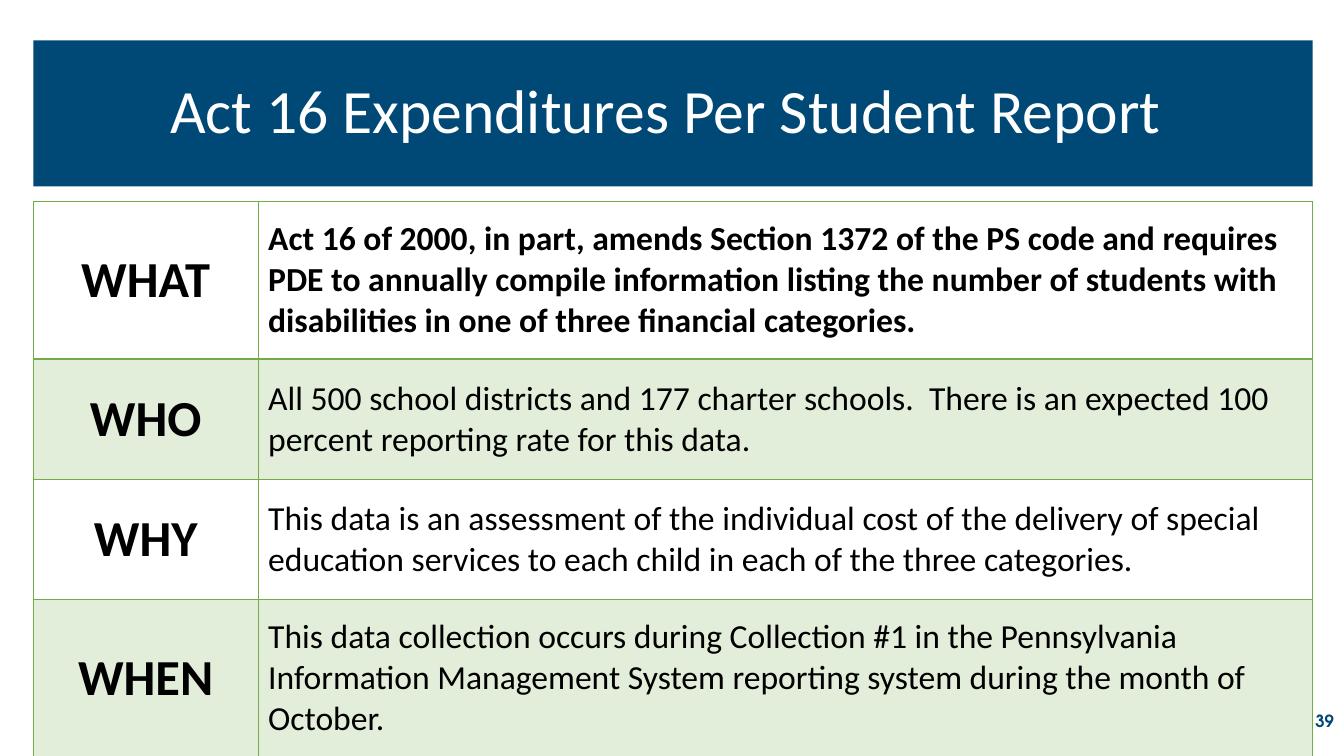
from lxml.etree import SubElement
from pptx import Presentation
from pptx.dml.color import RGBColor
from pptx.enum.shapes import MSO_SHAPE
from pptx.enum.text import MSO_ANCHOR, PP_ALIGN
from pptx.oxml import parse_xml
from pptx.oxml.ns import nsdecls, qn
from pptx.util import Inches, Pt

COLORS = {"navy": "004976", "green": "70AD47", "black": "000000", "white": "FFFFFF"}
ROWS = [
    ("WHAT", "Act 16 of 2000, in part, amends Section 1372 of the PS code and requires "
             "PDE to annually compile information listing the number of students with "
             "disabilities in one of three financial categories."),
    ("WHO", "All 500 school districts and 177 charter schools.  There is an expected "
            "100 percent reporting rate for this data."),
    ("WHY", "This data is an assessment of the individual cost of the delivery of special "
            "education services to each child in each of the three categories."),
    ("WHEN", "This data collection occurs during Collection #1 in the Pennsylvania "
             "Information Management System reporting system during the month of October."),
]
COL_WIDTHS = [2.23, 10.46]
ROW_HEIGHTS = [1.56, 1.2, 1.19, 1.56]


class Deck:
    font = "Calibri"

    def __init__(self):
        self.prs = Presentation()
        self.prs.slide_width, self.prs.slide_height = Inches(13.33), Inches(7.5)
        self.s = self.prs.slides.add_slide(self.prs.slide_layouts[6])

    def add_text(self, tf, text, size, color, bold=False, align=PP_ALIGN.LEFT, font=None):
        tf.word_wrap = True
        p = tf.paragraphs[0]
        p.alignment = align
        r = p.add_run()
        r.text = text
        r.font.size, r.font.bold, r.font.name = Pt(size), bold, font or self.font
        r.font.color.rgb = RGBColor.from_string(COLORS[color])
        return p

    def banner(self, x, y, w, h, text):
        sp = self.s.shapes.add_shape(MSO_SHAPE.RECTANGLE, Inches(x), Inches(y), Inches(w), Inches(h))
        sp.shadow.inherit = False
        sp.fill.solid()
        sp.fill.fore_color.rgb = RGBColor.from_string(COLORS["navy"])
        sp.line.fill.background()
        sp.text_frame.vertical_anchor = MSO_ANCHOR.MIDDLE
        p = self.add_text(sp.text_frame, text, 44, "white", align=PP_ALIGN.CENTER)
        p.line_spacing = 0.9

    def label(self, x, y, w, h, text):
        sp = self.s.shapes.add_textbox(Inches(x), Inches(y), Inches(w), Inches(h))
        sp.text_frame.vertical_anchor = MSO_ANCHOR.MIDDLE
        self.add_text(sp.text_frame, text, 12, "navy", True, PP_ALIGN.RIGHT, "TeX Gyre Adventor")

    def style_cell(self, cell, shaded, top, bottom):
        cell.vertical_anchor = MSO_ANCHOR.MIDDLE
        tcPr = cell._tc.get_or_add_tcPr()
        if shaded:
            cell.fill.solid()
            cell.fill.fore_color.rgb = RGBColor.from_string(COLORS["green"])
            SubElement(tcPr.find(".//" + qn("a:srgbClr")), qn("a:alpha"), val="20000")
        else:
            cell.fill.background()
        # Borders come before the fill in the cell properties
        sides = [("L", 1), ("R", 1), ("T", top), ("B", bottom)]
        for i, (side, width) in enumerate(sides):
            tcPr.insert(i, parse_xml(
                f'<a:ln{side} {nsdecls("a")} w="{Pt(width)}"><a:solidFill>'
                f'<a:srgbClr val="{COLORS["green"]}"/></a:solidFill></a:ln{side}>'))

    def table(self, x, y, rows, widths, heights):
        frame = self.s.shapes.add_table(len(rows), len(widths), Inches(x), Inches(y),
                                        Inches(sum(widths)), Inches(sum(heights)))
        tbl = frame.table
        tbl.first_row = tbl.horz_banding = False
        for col, w in zip(tbl.columns, widths):
            col.width = Inches(w)
        for i, (heading, detail) in enumerate(rows):
            tbl.rows[i].height = Inches(heights[i])
            head, body = tbl.cell(i, 0), tbl.cell(i, 1)
            for cell in (head, body):
                self.style_cell(cell, i % 2 == 1, 2 if i == 1 else 1, 2 if i == 0 else 1)
            self.add_text(head.text_frame, heading, 36, "black", True, PP_ALIGN.CENTER)
            self.add_text(body.text_frame, detail, 24, "black", bold=i == 0)


def main():
    deck = Deck()
    # Title
    deck.banner(0.33, 0.4, 12.69, 1.45, "Act 16 Expenditures Per Student Report ")
    # Questions and answers
    deck.table(0.33, 2, ROWS, COL_WIDTHS, ROW_HEIGHTS)
    # Slide number
    deck.label(10.33, 6.95, 3, 0.4, "39")
    deck.prs.save("out.pptx")


if __name__ == "__main__":
    main()
